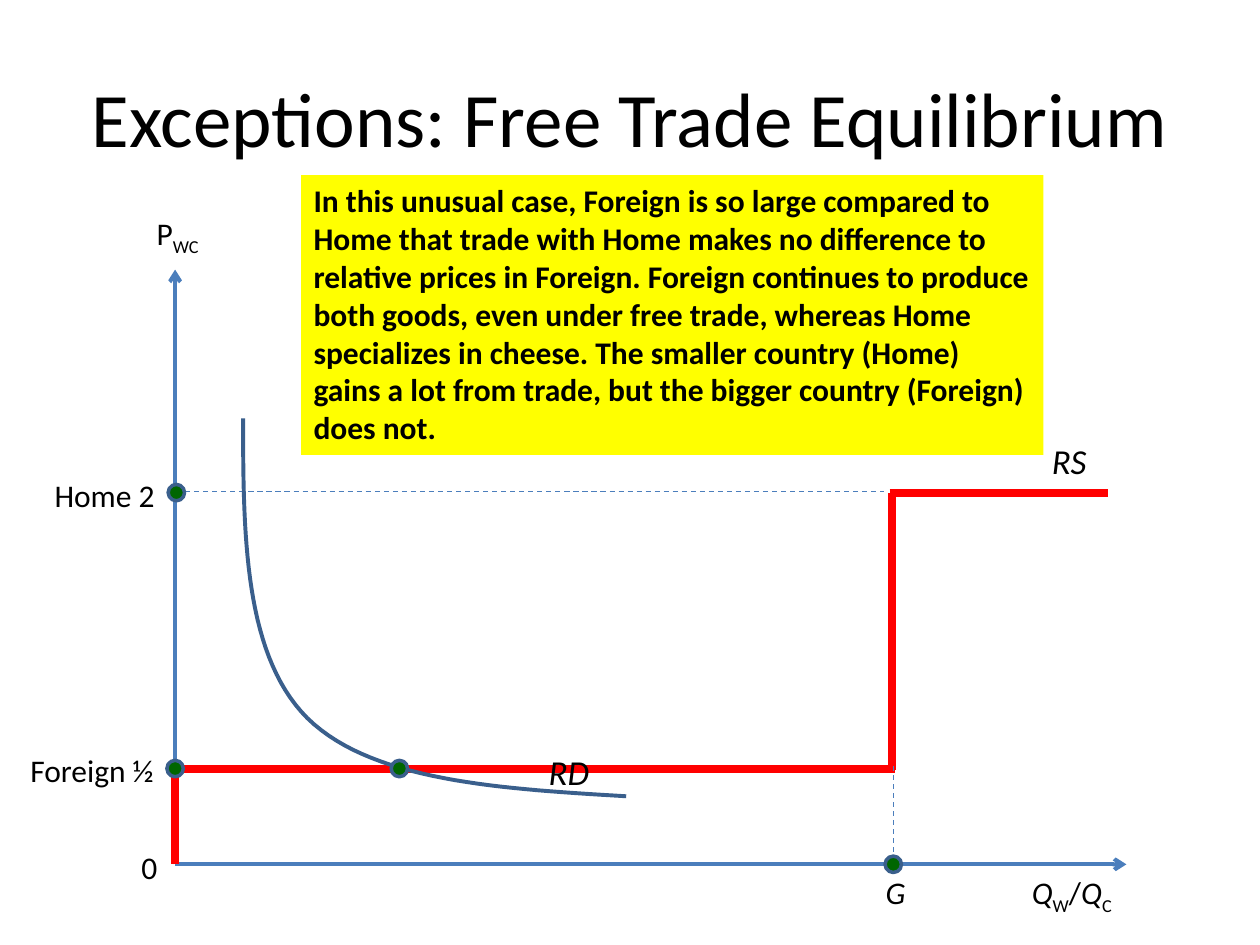
from dataclasses import dataclass

from lxml import etree
from pptx import Presentation
from pptx.dml.color import RGBColor
from pptx.enum.dml import MSO_LINE
from pptx.enum.shapes import MSO_CONNECTOR, MSO_SHAPE
from pptx.enum.text import MSO_ANCHOR, PP_ALIGN
from pptx.oxml.ns import qn
from pptx.util import Inches, Pt

LEFT, CENTER = PP_ALIGN.LEFT, PP_ALIGN.CENTER
DASH = MSO_LINE.DASH
TOP, MIDDLE = MSO_ANCHOR.TOP, MSO_ANCHOR.MIDDLE
STRAIGHT = MSO_CONNECTOR.STRAIGHT
OVAL, RECT = MSO_SHAPE.OVAL, MSO_SHAPE.RECTANGLE
FONT = "Calibri"
BLUE, NAVY, RED = "4B7EBC", "3A5F8C", "FF0000"
GREEN, YELLOW, BLACK = "006600", "FFFF00", "000000"
DOT = 0.13

# Key positions on the graph
AXIS, BASE = 1.39, 6.86
HOME, ABROAD, GAP = 3.91, 6.1, 7.09

NOTE = (
    "In this unusual case, Foreign is so large compared to Home that trade "
    "with Home makes no difference to relative prices in Foreign. Foreign "
    "continues to produce both goods, even under free trade, whereas Home "
    "specializes in cheese. The smaller country (Home) gains a lot from "
    "trade, but the bigger country (Foreign) does not."
)


@dataclass
class Line:
    x1: float
    y1: float
    x2: float
    y2: float
    color: str = BLUE
    width: float = 2.25
    dash: bool = False
    arrow: bool = False


@dataclass
class Bit:
    text: str
    italic: bool = False
    sub: bool = False


@dataclass
class Label:
    x: float
    y: float
    w: float
    h: float
    bits: list[Bit]
    size: int = 18
    align: PP_ALIGN = CENTER


AXES = [
    Line(AXIS, BASE, AXIS, 2.14, arrow=True),
    Line(AXIS, BASE, 8.94, BASE, arrow=True),
]
GUIDES = [
    Line(GAP, 6.08, GAP, 6.85, width=0.75, dash=True),
    Line(1.47, 3.9, 7.02, 3.9, width=0.75, dash=True),
]
SUPPLY = [
    Line(AXIS, ABROAD, AXIS, BASE, RED, 4.5),
    Line(AXIS, ABROAD, 7.1, ABROAD, RED, 4.5),
    Line(7.08, HOME, 7.08, 6.11, RED, 4.5),
    Line(7.06, HOME, 8.79, HOME, RED, 4.5),
]
DOTS = [(1.4, HOME), (AXIS, ABROAD), (3.17, ABROAD), (GAP, BASE)]
DEMAND = [
    [(1.93, 3.32), (1.93, 4.26), (1.94, 5.2), (2.44, 5.7)],
    [(2.44, 5.7), (2.95, 6.2), (3.96, 6.26), (4.97, 6.32)],
]
LABELS = [
    Label(0.92, 1.65, 0.98, 0.4, [Bit("P"), Bit("WC", sub=True)]),
    Label(8.09, 6.88, 0.98, 0.4, [
        Bit("Q", italic=True), Bit("W", sub=True), Bit("/"),
        Bit("Q", italic=True), Bit("C", sub=True)], align=LEFT),
    Label(0.98, 6.68, 0.41, 0.4, [Bit("0")]),
    Label(6.93, 6.88, 0.36, 0.4, [Bit("G", italic=True)], align=LEFT),
    Label(4.22, 5.91, 0.59, 0.44, [Bit("RD", italic=True)], 20),
    Label(8.19, 3.44, 0.59, 0.44, [Bit("RS", italic=True)], 20),
    Label(0.27, 3.73, 1.12, 0.4, [Bit("Home 2")]),
    Label(0.13, 5.91, 1.26, 0.4, [Bit("Foreign ½ ")]),
]


def paint(fmt, color: str) -> None:
    fmt.solid()
    fmt.fore_color.rgb = RGBColor.from_string(color)


def style(para, size: int, align: PP_ALIGN, bold: bool = False) -> None:
    para.alignment = align
    font = para.font
    font.name, font.size, font.bold = FONT, Pt(size), bold
    paint(font.fill, BLACK)


def draw_line(shapes, line: Line) -> None:
    ends = (Inches(v) for v in (line.x1, line.y1, line.x2, line.y2))
    link = shapes.add_connector(STRAIGHT, *ends)
    paint(link.line.fill, line.color)
    link.line.width = Pt(line.width)
    if line.dash:
        link.line.dash_style = DASH
    props = link._element.spPr
    if line.arrow:
        tail = etree.SubElement(props.find(qn("a:ln")), qn("a:tailEnd"))
        tail.set("type", "arrow")
    etree.SubElement(props, qn("a:effectLst"))


def draw_dot(shapes, x: float, y: float) -> None:
    dot = shapes.add_shape(OVAL, Inches(x - DOT / 2), Inches(y - DOT / 2),
                           Inches(DOT), Inches(DOT))
    dot.shadow.inherit = False
    paint(dot.fill, GREEN)
    paint(dot.line.fill, NAVY)
    dot.line.width = Pt(2)


def trace(bend: list[tuple], steps: int = 30) -> list[tuple]:
    """Points along a cubic curve, without its start."""
    points = []
    for i in range(1, steps + 1):
        t = i / steps
        u = 1 - t
        mix = (u**3, 3 * u * u * t, 3 * u * t * t, t**3)
        points.append(tuple(sum(m * p[k] for m, p in zip(mix, bend))
                            for k in (0, 1)))
    return points


def draw_curve(shapes, bends: list[list[tuple]]) -> None:
    x0, y0 = bends[0][0]
    pen = shapes.build_freeform(Inches(x0), Inches(y0))
    points = [p for bend in bends for p in trace(bend)]
    pen.add_line_segments([(Inches(x), Inches(y)) for x, y in points],
                          close=False)
    curve = pen.convert_to_shape()
    curve.shadow.inherit = False
    curve.fill.background()
    paint(curve.line.fill, NAVY)
    curve.line.width = Pt(2.25)


def draw_label(shapes, label: Label, anchor: MSO_ANCHOR = TOP) -> None:
    box = shapes.add_textbox(Inches(label.x), Inches(label.y),
                             Inches(label.w), Inches(label.h))
    frame = box.text_frame
    frame.word_wrap = True
    frame.vertical_anchor = anchor
    para = frame.paragraphs[0]
    style(para, label.size, label.align)
    for bit in label.bits:
        run = para.add_run()
        run.text = bit.text
        if bit.italic:
            run.font.italic = True
        if bit.sub:
            run.font._element.set("baseline", "-25000")


def draw_note(shapes) -> None:
    box = shapes.add_shape(RECT, Inches(2.39), Inches(1.39),
                           Inches(5.89), Inches(2.22))
    box.shadow.inherit = False
    paint(box.fill, YELLOW)
    box.line.fill.background()
    frame = box.text_frame
    frame.word_wrap = True
    frame.vertical_anchor = TOP
    frame.text = NOTE
    style(frame.paragraphs[0], 18, LEFT, bold=True)


def main() -> None:
    deck = Presentation()
    deck.slide_width, deck.slide_height = Inches(10), Inches(7.5)
    shapes = deck.slides.add_slide(deck.slide_layouts[6]).shapes

    # Title
    title = Label(0.5, 0.3, 9, 1.25,
                  [Bit("Exceptions: Free Trade Equilibrium")], 44)
    draw_label(shapes, title, MIDDLE)

    # Graph
    for line in AXES + SUPPLY + GUIDES:
        draw_line(shapes, line)
    draw_curve(shapes, DEMAND)
    for x, y in DOTS:
        draw_dot(shapes, x, y)

    # Words
    for label in LABELS:
        draw_label(shapes, label)
    draw_note(shapes)
    deck.save("out.pptx")


if __name__ == "__main__":
    main()
